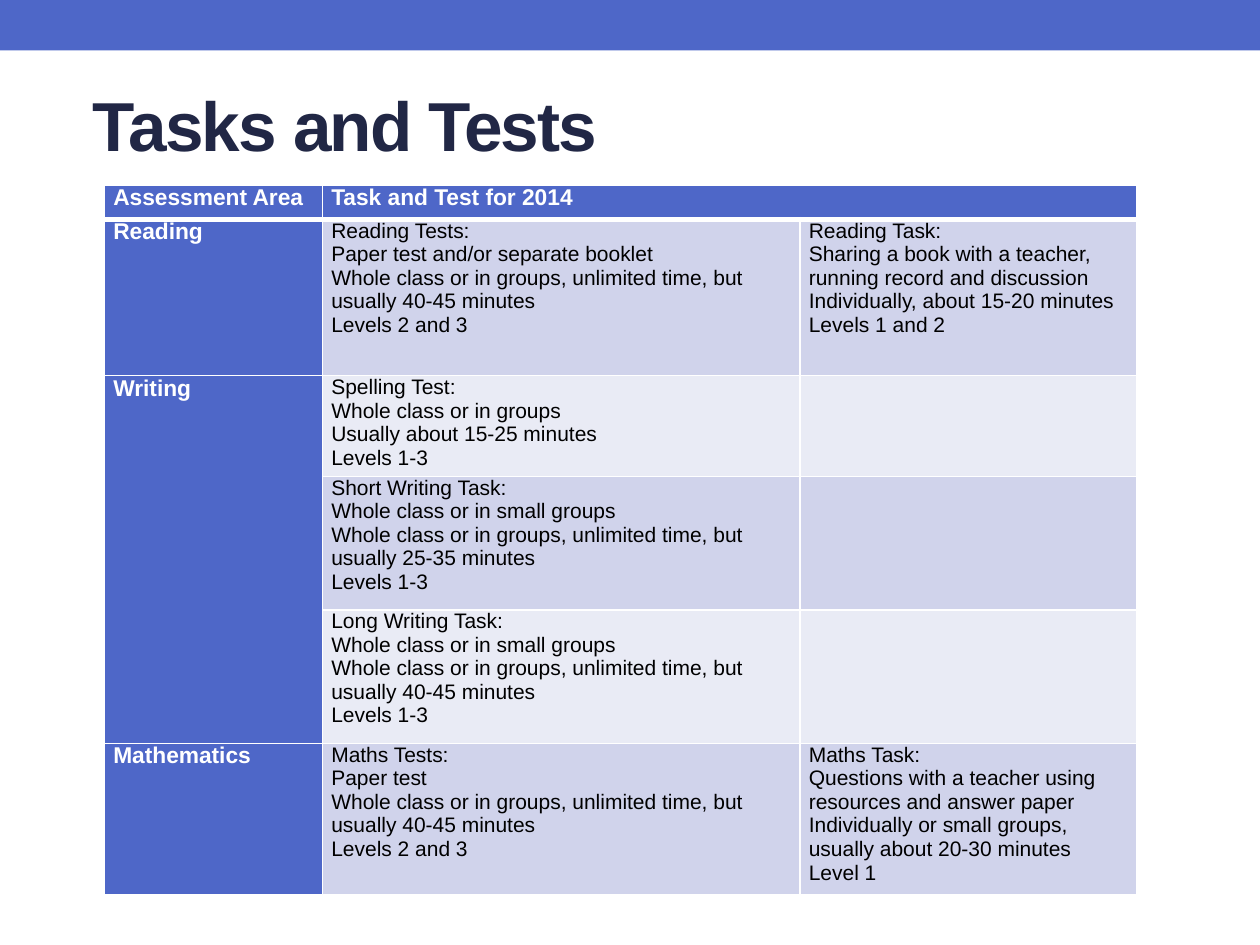
from dataclasses import dataclass

from lxml.etree import SubElement
from pptx import Presentation
from pptx.dml.color import RGBColor
from pptx.enum.shapes import MSO_SHAPE
from pptx.enum.text import MSO_ANCHOR
from pptx.oxml.ns import qn
from pptx.util import Inches, Pt


@dataclass(frozen=True)
class Theme:
    font: str = "Arial"
    accent: str = "4E67C8"
    heading: str = "212745"
    body: str = "000000"
    light: str = "FFFFFF"
    bands: tuple = ("D0D3EB", "E9EBF5")
    title_size: float = 39.6
    label_size: float = 13
    body_size: float = 12
    border: float = 1
    header_border: float = 3


GROUP_TIMING = "Whole class or in groups, unlimited time, but usually {} minutes"
HEADER = ["Assessment Area", "Task and Test for 2014", ""]
ASSESSMENTS = [
    ["Reading",
     ["Reading Tests:", "Paper test and/or separate booklet",
      GROUP_TIMING.format("40-45"), "Levels 2 and 3"],
     ["Reading Task:",
      "Sharing a book with a teacher, running record and discussion",
      "Individually, about 15-20 minutes", "Levels 1 and 2"]],
    ["Writing",
     ["Spelling Test:", "Whole class or in groups",
      "Usually about 15-25 minutes", "Levels 1-3"],
     []],
    ["",
     ["Short Writing Task:", "Whole class or in small groups",
      GROUP_TIMING.format("25-35"), "Levels 1-3"],
     []],
    ["",
     ["Long Writing Task:", "Whole class or in small groups",
      GROUP_TIMING.format("40-45"), "Levels 1-3"],
     []],
    ["Mathematics",
     ["Maths Tests:", "Paper test",
      GROUP_TIMING.format("40-45"), "Levels 2 and 3"],
     ["Maths Task:", "Questions with a teacher using",
      "resources and answer paper",
      "Individually or small groups, usually about 20-30 minutes", "Level 1"]],
]
COLUMN_WIDTHS = [1.73, 3.79, 2.67]
ROW_HEIGHTS = [0.27, 1.24, 0.71, 1.06, 1.06, 1.06]


class SlideBuilder:
    def __init__(self, slide, theme):
        self.slide = slide
        self.theme = theme

    def text(self, frame, lines, size, color, bold):
        frame.text = "\n".join(lines)
        style = {"name": self.theme.font, "size": Pt(size), "bold": bold}
        for paragraph in frame.paragraphs:
            for run in paragraph.runs:
                for attribute, value in style.items():
                    setattr(run.font, attribute, value)
                run.font.color.rgb = RGBColor.from_string(color)

    def band(self, left, top, width, height):
        band = self.slide.shapes.add_shape(
            MSO_SHAPE.RECTANGLE, *map(Inches, (left, top, width, height)))
        band.shadow.inherit = False
        band.fill.solid()
        band.fill.fore_color.rgb = RGBColor.from_string(self.theme.accent)
        band.line.fill.background()

    def title(self, wording, left, top, width, height):
        frame = self.slide.shapes.add_textbox(
            *map(Inches, (left, top, width, height))).text_frame
        frame.word_wrap = True
        frame.vertical_anchor = MSO_ANCHOR.MIDDLE
        self.text(frame, [wording], self.theme.title_size, self.theme.heading, True)
        frame.paragraphs[0].runs[0].font._element.set("spc", "-100")

    def borders(self, cell, top, bottom):
        """Draw the four edges; call before the fill, which must follow them in XML."""
        edges = {"lnL": self.theme.border, "lnR": self.theme.border,
                 "lnT": top, "lnB": bottom}
        properties = cell._tc.get_or_add_tcPr()
        for tag, width in edges.items():
            edge = SubElement(properties, qn(f"a:{tag}"), w=str(Pt(width)))
            paint = SubElement(edge, qn("a:solidFill"))
            SubElement(paint, qn("a:srgbClr"), val=self.theme.light)

    def cell(self, cell, lines, row, column):
        theme = self.theme
        is_label = row == 0 or column == 0
        self.borders(cell,
                     theme.header_border if row == 1 else theme.border,
                     theme.header_border if row == 0 else theme.border)
        cell.fill.solid()
        cell.fill.fore_color.rgb = RGBColor.from_string(
            theme.accent if is_label else theme.bands[(row - 1) % 2])
        if not lines:
            return
        margins = {"margin_left": 0.07, "margin_right": 0.07,
                   "margin_top": 0, "margin_bottom": 0}
        for attribute, value in margins.items():
            setattr(cell, attribute, Inches(value))
        if is_label:
            self.text(cell.text_frame, lines, theme.label_size, theme.light, True)
        else:
            self.text(cell.text_frame, lines, theme.body_size, theme.body, False)

    def table(self, rows, left, top, widths, heights):
        table = self.slide.shapes.add_table(
            len(heights), len(widths), Inches(left), Inches(top),
            Inches(sum(widths)), Inches(sum(heights))).table
        for column, width in zip(table.columns, widths):
            column.width = Inches(width)
        for row, height in zip(table.rows, heights):
            row.height = Inches(height)
        for r, contents in enumerate(rows):
            for c, content in enumerate(contents):
                lines = [content] if isinstance(content, str) and content else content
                self.cell(table.cell(r, c), lines, r, c)
        return table


def main():
    presentation = Presentation()
    presentation.slide_width = Inches(10)
    presentation.slide_height = Inches(7.5)
    slide = presentation.slides.add_slide(presentation.slide_layouts[6])

    builder = SlideBuilder(slide, Theme())
    builder.band(0, 0, 10, 0.4)
    builder.title(" Tasks and Tests", 0.5, 0.58, 8.36, 0.8)
    assessments = builder.table(
        [HEADER, *ASSESSMENTS], 0.83, 1.47, COLUMN_WIDTHS, ROW_HEIGHTS)
    assessments.cell(0, 1).merge(assessments.cell(0, 2))
    assessments.cell(2, 0).merge(assessments.cell(4, 0))

    presentation.save("out.pptx")


if __name__ == "__main__":
    main()
